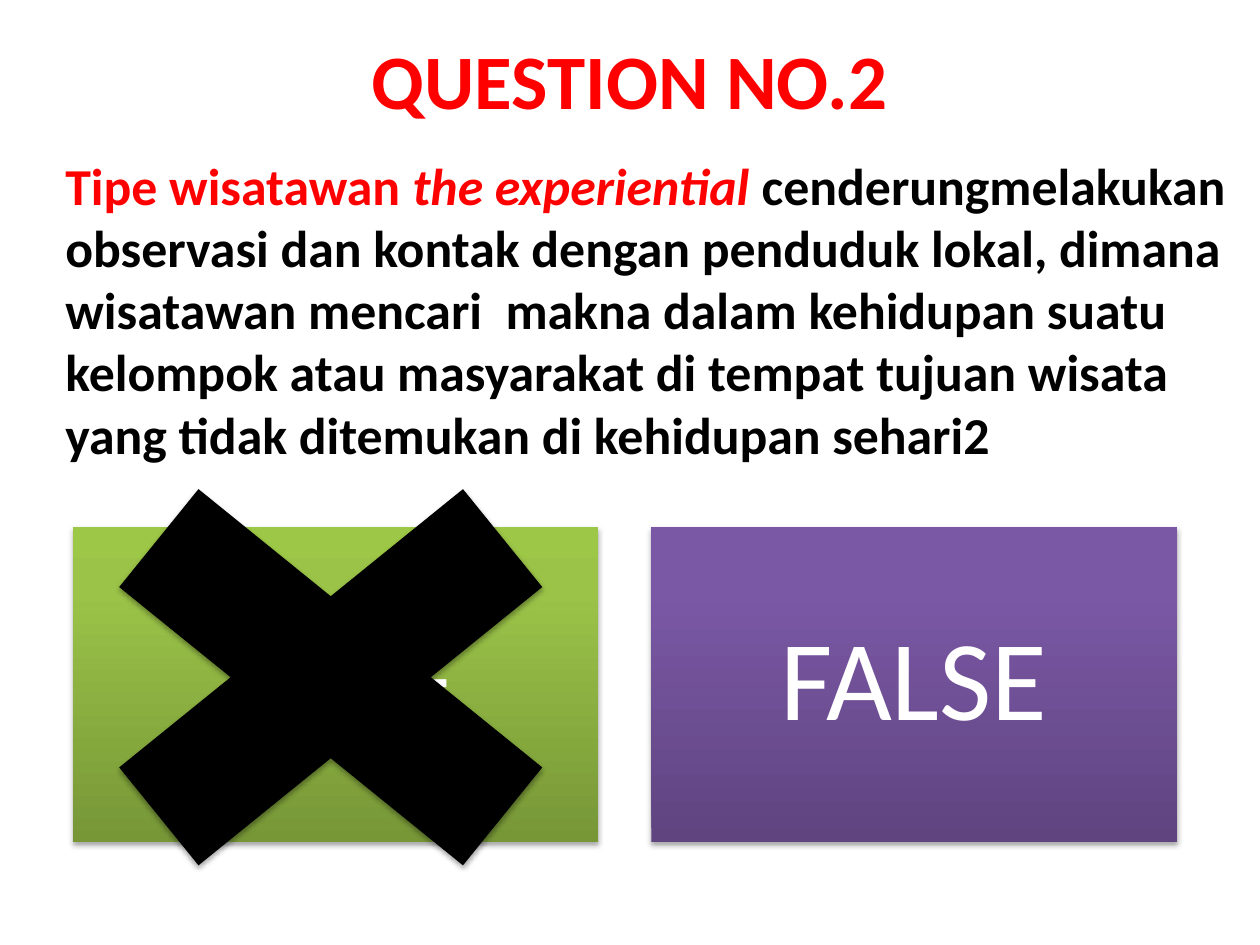
from copy import deepcopy

from lxml import etree
from pptx import Presentation
from pptx import util as u
from pptx.dml.color import RGBColor
from pptx.enum import shapes, text
from pptx.oxml.ns import qn


def rgb(value):
    return RGBColor.from_string(value)


def add_text(p, content, size, color, bold=False, italic=False, font="Calibri"):
    r = p.add_run()
    r.text = content
    f = r.font
    f.name, f.size, f.bold, f.italic = font, u.Pt(size), bold, italic
    f.color.rgb = rgb(color)
    return r


class SlideBuilder:
    RED, BLACK, WHITE = "FF0000", "000000", "FFFFFF"

    def __init__(self, prs):
        self.s = prs.slides.add_slide(prs.slide_layouts[6])

    def text_box(self, box, runs, size, align, anchor, before=0):
        sp = self.s.shapes.add_textbox(*map(u.Inches, box))
        tf = sp.text_frame
        tf.word_wrap, tf.vertical_anchor = True, anchor
        p = tf.paragraphs[0]
        p.alignment, p.space_before = align, u.Pt(before)
        for content, color, italic in runs:
            add_text(p, content, size, color, bold=True, italic=italic)

    def shape(self, kind, box):
        sp = self.s.shapes.add_shape(kind, *map(u.Inches, box))
        sp.line.fill.background()
        return sp

    def shadow(self, sp):
        sp.shadow.inherit = False
        effects = sp._element.spPr.find(qn("a:effectLst"))
        outer = etree.SubElement(effects, qn("a:outerShdw"), blurRad=str(u.Pt(3.1)),
                                 dist=str(u.Pt(1.8)), dir="5400000", rotWithShape="0")
        color = etree.SubElement(outer, qn("a:srgbClr"), val=self.BLACK)
        etree.SubElement(color, qn("a:alpha"), val="35000")

    def answer(self, box, label, colors):
        sp = self.shape(shapes.MSO_SHAPE.RECTANGLE, box)
        sp.fill.gradient()
        sp.fill.gradient_angle = 90
        stops = sp._element.spPr.find(qn("a:gradFill")).find(qn("a:gsLst"))
        stops.append(deepcopy(stops[-1]))
        for stop, position, color in zip(sp.fill.gradient_stops, (0, 0.8, 1), colors):
            stop.position = position
            stop.color.rgb = rgb(color)
        self.shadow(sp)
        tf = sp.text_frame
        tf.word_wrap, tf.vertical_anchor = True, text.MSO_ANCHOR.MIDDLE
        tf.margin_left = tf.margin_right = tf.margin_top = tf.margin_bottom = u.Inches(0.27)
        p = tf.paragraphs[0]
        p.alignment, p.line_spacing = text.PP_ALIGN.CENTER, 0.9
        add_text(p, label, 65, self.WHITE)

    def cross(self, box):
        sp = self.shape(shapes.MSO_SHAPE.MATH_MULTIPLY, box)
        sp.fill.solid()
        sp.fill.fore_color.rgb = rgb(self.BLACK)
        self.shadow(sp)


def main():
    prs = Presentation()
    prs.slide_width, prs.slide_height = u.Inches(10), u.Inches(7.5)
    b = SlideBuilder(prs)
    b.text_box((0.5, 0, 9, 1.25), [("QUESTION NO.2", b.RED, False)], 44,
               text.PP_ALIGN.CENTER, text.MSO_ANCHOR.MIDDLE)
    question = [
        ("Tipe wisatawan ", b.RED, False),
        ("the experiential ", b.RED, True),
        ("cenderungmelakukan observasi dan kontak dengan penduduk lokal, dimana "
         "wisatawan mencari  makna dalam kehidupan suatu kelompok atau masyarakat "
         "di tempat tujuan wisata yang tidak ditemukan di kehidupan sehari2",
         b.BLACK, False),
    ]
    b.text_box((0.42, 1.17, 9.58, 2.75), question, 29.6,
               text.PP_ALIGN.LEFT, text.MSO_ANCHOR.TOP, before=6)
    answers = [("TRUE", ("779737", "9BC348", "9DC746")),
               ("FALSE", ("5F4480", "7B58A6", "7C57A8"))]
    left, width, gap = 0.58, 4.17, 0.42
    for i, (label, colors) in enumerate(answers):
        b.answer((left + i * (width + gap), 4.18, width, 2.5), label, colors)
    b.cross((0, 3.25, 5.25, 4.25))
    prs.save("out.pptx")


if __name__ == "__main__":
    main()
